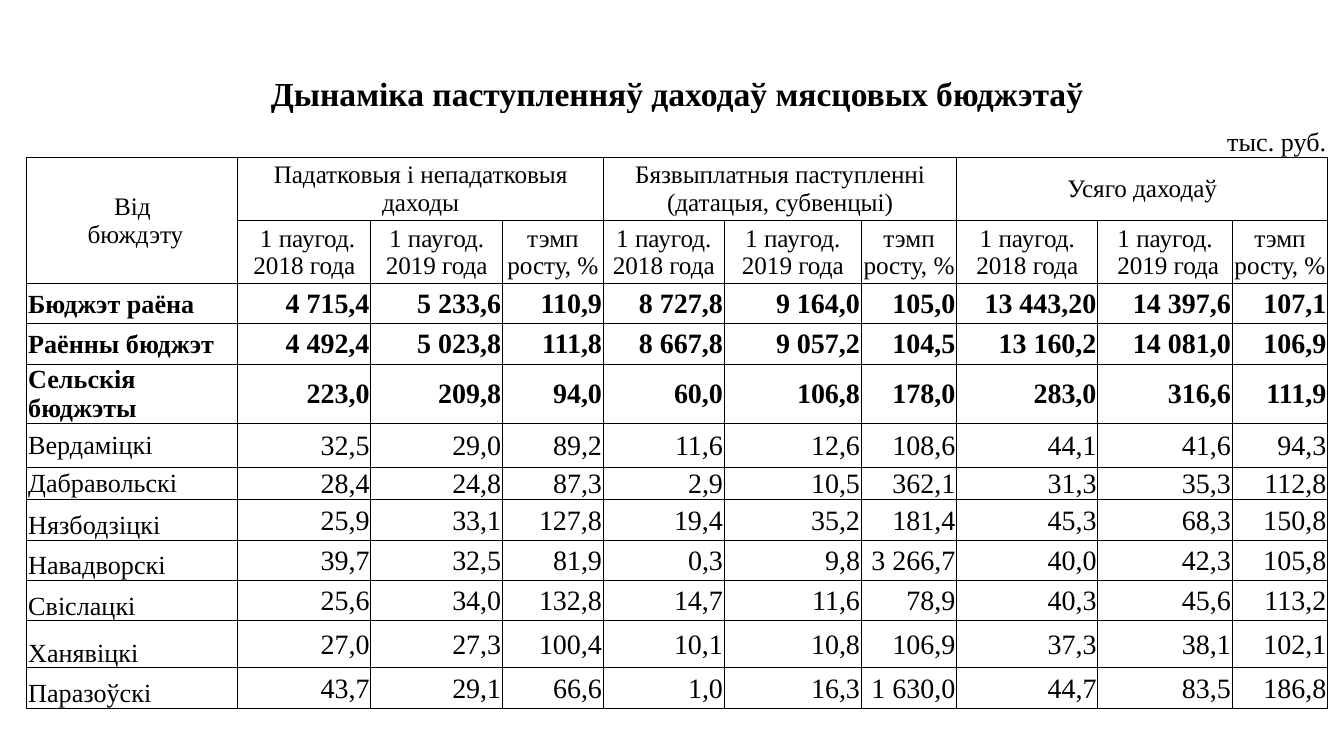
from dataclasses import dataclass

from lxml import etree
from pptx import Presentation
from pptx.dml.color import RGBColor
from pptx.enum.text import MSO_ANCHOR, PP_ALIGN
from pptx.oxml.ns import qn
from pptx.table import Table, _Cell
from pptx.util import Inches, Pt

LEFT, CENTER, RIGHT = PP_ALIGN.LEFT, PP_ALIGN.CENTER, PP_ALIGN.RIGHT
TOP, MIDDLE, BOTTOM = MSO_ANCHOR.TOP, MSO_ANCHOR.MIDDLE, MSO_ANCHOR.BOTTOM
BLACK = RGBColor(0x00, 0x00, 0x00)
FONT = "Times New Roman"
BORDER_WIDTH = Pt(0.5)
ALL_SIDES = ("lnL", "lnR", "lnT", "lnB")
UNIT_ROW, GROUP_ROW, PERIOD_ROW, FIRST_BUDGET_ROW = 1, 2, 3, 4

PAGE_WIDTH = Inches(10)
PAGE_HEIGHT = PAGE_WIDTH * 9 // 16
COLUMN_WIDTHS = (1.57, 0.99, 0.84, 0.14, 0.75, 0.9, 0.21, 0.81, 0.71, 1.05, 0.85, 0.15, 0.71)
ROW_HEIGHTS = (0.32, 0.32, 0.47, 0.47, 0.3, 0.3, 0.3, 0.33, 0.24, 0.3, 0.3, 0.3, 0.35, 0.3)
VALUE_SPANS = ((1, 1), (2, 2), (4, 1), (5, 1), (6, 2), (8, 1), (9, 1), (10, 2), (12, 1))
UNIT_SPANS = ((1, 2), (3, 4), (7, 2), (11, 2))


@dataclass(frozen=True)
class Style:
    """Look of the text in a cell."""

    size: float
    align: PP_ALIGN = CENTER
    anchor: MSO_ANCHOR = MIDDLE
    bold: bool = False


@dataclass(frozen=True)
class Budget:
    """One budget with its nine values."""

    name: str
    values: tuple[str, ...]
    bold: bool = False
    name_anchor: MSO_ANCHOR = BOTTOM
    value_anchor: MSO_ANCHOR = MIDDLE


TITLE = Style(18, anchor=BOTTOM, bold=True)
UNIT = Style(14, RIGHT, BOTTOM)
HEADER = Style(13.5)

GROUPS = (
    "Падатковыя і непадатковыя даходы",
    "Бязвыплатныя паступленні (датацыя, субвенцыі)",
    "Усяго даходаў",
)
GROWTH = "тэмп\nросту, %"
PERIODS = (
    " 1 паугод. 2018 года", "1 паугод. 2019 года", GROWTH,
    "1 паугод.\n2018 года", "1 паугод. 2019 года", GROWTH,
    "1 паугод. 2018 года", "1 паугод.\n 2019 года", GROWTH,
)
BUDGETS = (
    Budget("Бюджэт раёна", ("4 715,4", "5 233,6", "110,9", "8 727,8", "9 164,0", "105,0",
                            "13 443,20", "14 397,6", "107,1"), True, MIDDLE),
    Budget("Раённы бюджэт", ("4 492,4", "5 023,8", "111,8", "8 667,8", "9 057,2", "104,5",
                             "13 160,2", "14 081,0", "106,9"), True, MIDDLE),
    Budget("Сельскія бюджэты", ("223,0", "209,8", "94,0", "60,0", "106,8", "178,0",
                                "283,0", "316,6", "111,9"), True, MIDDLE),
    Budget("Вердаміцкі", ("32,5", "29,0", "89,2", "11,6", "12,6", "108,6",
                          "44,1", "41,6", "94,3"), name_anchor=MIDDLE),
    Budget("Дабравольскі", ("28,4", "24,8", "87,3", "2,9", "10,5", "362,1",
                            "31,3", "35,3", "112,8"), name_anchor=TOP, value_anchor=TOP),
    Budget("Нязбодзіцкі", ("25,9", "33,1", "127,8", "19,4", "35,2", "181,4",
                           "45,3", "68,3", "150,8")),
    Budget("Навадворскі", ("39,7", "32,5", "81,9", "0,3", "9,8", "3 266,7",
                           "40,0", "42,3", "105,8")),
    Budget("Свіслацкі", ("25,6", "34,0", "132,8", "14,7", "11,6", "78,9",
                         "40,3", "45,6", "113,2")),
    Budget("Ханявіцкі", ("27,0", "27,3", "100,4", "10,1", "10,8", "106,9",
                         "37,3", "38,1", "102,1")),
    Budget("Паразоўскі", ("43,7", "29,1", "66,6", "1,0", "16,3", "1 630,0",
                          "44,7", "83,5", "186,8")),
)


def add_border(cell: _Cell, side: str) -> None:
    """Draw one border line of a cell."""
    line = etree.SubElement(cell._tc.get_or_add_tcPr(), qn(f"a:{side}"), w=str(BORDER_WIDTH))
    fill = etree.SubElement(line, qn("a:solidFill"))
    etree.SubElement(fill, qn("a:srgbClr"), val=str(BLACK))


def prepare_cell(cell: _Cell, sides: tuple[str, ...]) -> None:
    """Set the margins, borders, empty fill and resting text size of a cell."""
    cell.margin_left = cell.margin_top = cell.margin_right = Inches(0.01)
    cell.margin_bottom = Inches(0)
    for side in sides:
        add_border(cell, side)
    cell.fill.background()
    para = cell.text_frame.paragraphs[0]
    etree.SubElement(para._p, qn("a:endParaRPr"), sz=str(Pt(UNIT.size).centipoints))


def merge(table: Table, row: int, column: int, height: int, width: int) -> None:
    """Join a block of cells."""
    if height * width > 1:
        table.cell(row, column).merge(table.cell(row + height - 1, column + width - 1))


def write(cell: _Cell, text: str, style: Style) -> None:
    """Write each line of the text as a paragraph."""
    cell.vertical_anchor = style.anchor
    frame = cell.text_frame
    for index, line in enumerate(text.split("\n")):
        para = frame.add_paragraph() if index else frame.paragraphs[0]
        para.alignment = style.align
        span = para.add_run()
        span.text = line
        span.font.name = FONT
        span.font.size = Pt(style.size)
        span.font.bold = style.bold
        span.font.color.rgb = BLACK


def write_values(table: Table, row: int, texts: tuple[str, ...], style: Style) -> None:
    """Fill the nine value cells of a row."""
    for (column, width), text in zip(VALUE_SPANS, texts):
        merge(table, row, column, 1, width)
        write(table.cell(row, column), text, style)


def write_headings(table: Table) -> None:
    """Fill the title, the unit and the two header rows."""
    merge(table, 0, 0, 1, len(COLUMN_WIDTHS))
    write(table.cell(0, 0), "Дынаміка паступленняў даходаў мясцовых бюджэтаў", TITLE)
    for column, width in UNIT_SPANS:
        merge(table, UNIT_ROW, column, 1, width)
    write(table.cell(UNIT_ROW, 11), "тыс. руб.", UNIT)
    merge(table, GROUP_ROW, 0, 2, 1)
    write(table.cell(GROUP_ROW, 0), "Вiд\n бюждэту", HEADER)
    for index, group in enumerate(GROUPS):
        column = 1 + 4 * index
        merge(table, GROUP_ROW, column, 1, 4)
        write(table.cell(GROUP_ROW, column), group, HEADER)
    write_values(table, PERIOD_ROW, PERIODS, HEADER)


def write_budget(table: Table, row: int, budget: Budget) -> None:
    """Fill the row of one budget."""
    write(table.cell(row, 0), budget.name, Style(14, LEFT, budget.name_anchor, budget.bold))
    write_values(table, row, budget.values, Style(15, RIGHT, budget.value_anchor, budget.bold))


def main() -> None:
    """Build the slide with the budget revenue table."""
    deck = Presentation()
    deck.slide_width, deck.slide_height = PAGE_WIDTH, PAGE_HEIGHT
    page = deck.slides.add_slide(deck.slide_layouts[6])
    table = page.shapes.add_table(
        len(ROW_HEIGHTS), len(COLUMN_WIDTHS), Inches(0.2), Inches(0.53),
        Inches(sum(COLUMN_WIDTHS)), Inches(sum(ROW_HEIGHTS)),
    ).table
    table.first_row = table.horz_banding = False
    for column, width in zip(table.columns, COLUMN_WIDTHS):
        column.width = Inches(width)
    for index, (row, height) in enumerate(zip(table.rows, ROW_HEIGHTS)):
        row.height = Inches(height)
        sides = ALL_SIDES if index >= GROUP_ROW else ("lnB",) if index == UNIT_ROW else ()
        for cell in row.cells:
            prepare_cell(cell, sides)
    write_headings(table)
    for row, budget in enumerate(BUDGETS, FIRST_BUDGET_ROW):
        write_budget(table, row, budget)
    deck.save("out.pptx")


if __name__ == "__main__":
    main()
